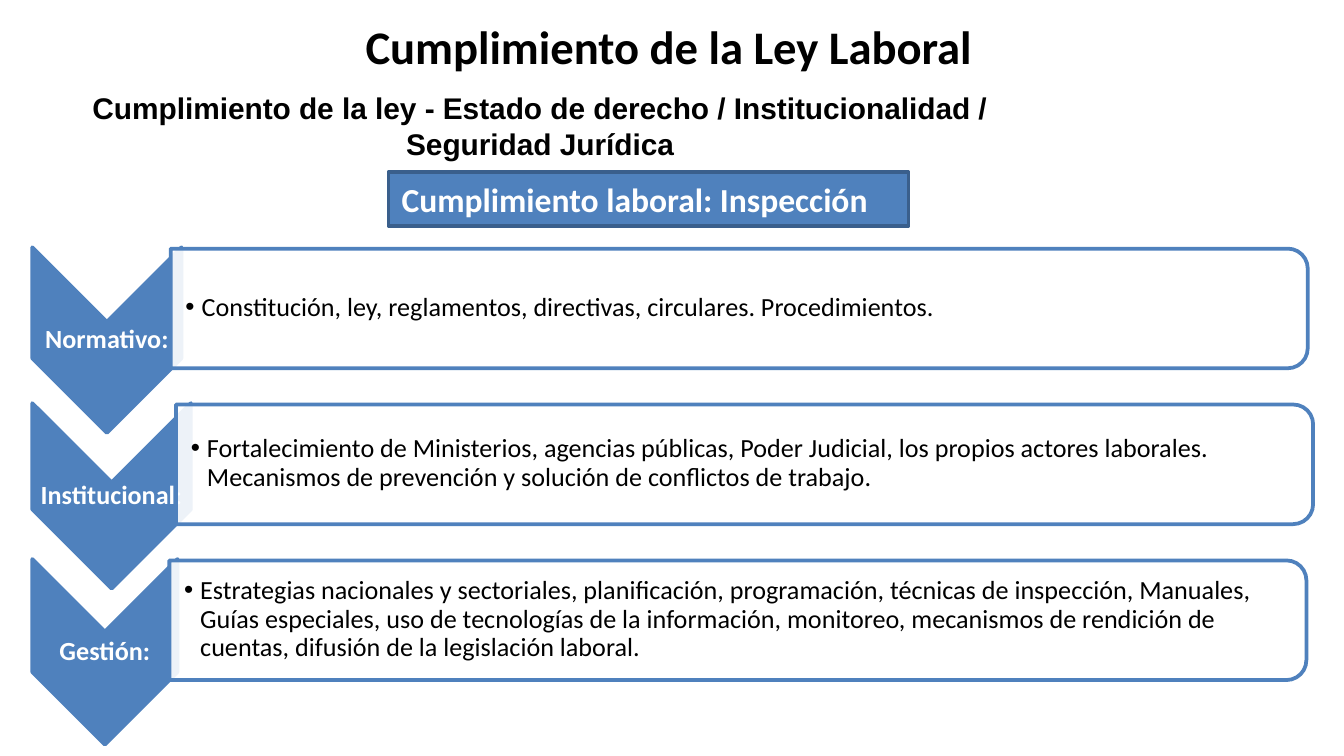
"""Build the slide on labour-law compliance with its three chevron rows."""
from lxml.etree import SubElement
from pptx import Presentation
from pptx.dml.color import RGBColor
from pptx.enum.shapes import MSO_SHAPE
from pptx.enum.text import MSO_ANCHOR, MSO_AUTO_SIZE, PP_ALIGN
from pptx.oxml.ns import qn
from pptx.util import Inches, Pt

COLOURS = {"blue": "4F81BD", "edge": "3A5F8C", "white": "FFFFFF", "black": "000000"}
ROW_TOP, ROW_PITCH = 1.84, 1.16
CHEVRON_LEFT, CHEVRON_LENGTH = 0.24, 1.38
PANEL_WIDTH, PANEL_HEIGHT = 8.46, 0.89
ROWS = [
    (1.11, 1.27, [("Normativo:", True)],
     "Constitución, ley, reglamentos, directivas, circulares. Procedimientos."),
    (1.18, 1.31, [("Institucional", True), (":", False)],
     "Fortalecimiento de Ministerios, agencias públicas, Poder Judicial, los propios "
     "actores laborales. Mecanismos de prevención y solución de conflictos de trabajo."),
    (1.08, 1.26, [("Gestión:", True)],
     "Estrategias nacionales y sectoriales, planificación, programación, técnicas de "
     "inspección, Manuales, Guías especiales, uso de tecnologías de la información, "
     "monitoreo, mecanismos de rendición de cuentas, difusión de la legislación laboral."),
]


def add_block(preset, centre_x, centre_y, width, height, fill, line, rotation=0):
    block = page.shapes.add_shape(preset, Inches(centre_x - width / 2),
                                  Inches(centre_y - height / 2), Inches(width), Inches(height))
    block.rotation = rotation
    block.shadow.inherit = False
    block.fill.solid()
    block.fill.fore_color.rgb = RGBColor.from_string(COLOURS[fill])
    block.line.color.rgb = RGBColor.from_string(COLOURS[line])
    block.line.width = Pt(2)
    return block


def write(box, place, runs, size, colour, align, font="Calibri", inset=None,
          anchor=MSO_ANCHOR.MIDDLE, spacing=1.0, bullet=False):
    box.left, box.top, box.width, box.height = [Inches(length) for length in place]
    page.shapes._spTree.append(box._element)
    frame = box.text_frame
    frame.word_wrap = True
    frame.auto_size = MSO_AUTO_SIZE.NONE
    frame.vertical_anchor = anchor
    if inset is not None:
        frame.margin_left = Inches(inset)
        frame.margin_top = frame.margin_right = frame.margin_bottom = Inches(0.01)
    para = frame.paragraphs[0]
    properties = para._p.get_or_add_pPr()
    properties.set("marL", str(Inches(0.12) if bullet else 0))
    properties.set("indent", str(Inches(-0.12) if bullet else 0))
    if bullet:
        SubElement(properties, qn("a:buFont")).set("typeface", "Arial")
        SubElement(properties, qn("a:buChar")).set("char", "•")
    else:
        SubElement(properties, qn("a:buNone"))
    para.alignment = align
    para.line_spacing = spacing
    para.space_before = Pt(0)
    for text, bold in runs:
        span = para.add_run()
        span.text = text
        span.font.name = font
        span.font.size = Pt(size)
        span.font.bold = bold
        span.font.color.rgb = RGBColor.from_string(COLOURS[colour])


deck = Presentation()
deck.slide_width = Inches(10)
deck.slide_height = deck.slide_width * 9 // 16
page = deck.slides.add_slide(deck.slide_layouts.get_by_name("Comparison"))
title, subtitle, *lists = page.placeholders

for index, (chevron_width, panel_left, label, detail) in enumerate(ROWS):
    top = ROW_TOP + index * ROW_PITCH
    chevron_x = CHEVRON_LEFT + chevron_width / 2
    chevron_y = top + CHEVRON_LENGTH / 2
    panel_y = top + 0.01 + PANEL_HEIGHT / 2
    add_block(MSO_SHAPE.CHEVRON, chevron_x, chevron_y, CHEVRON_LENGTH, chevron_width,
              "blue", "blue", 90)
    write(page.shapes.add_textbox(0, 0, 0, 0),
          (CHEVRON_LEFT, chevron_y - 0.14, chevron_width, 0.28), label, 14, "white",
          PP_ALIGN.CENTER, inset=0.01, spacing=0.9)
    panel = add_block(MSO_SHAPE.ROUND_2_SAME_RECTANGLE, panel_left + PANEL_WIDTH / 2, panel_y,
                      PANEL_HEIGHT, PANEL_WIDTH, "white", "blue", 90)
    panel_fill = panel._element.spPr.find(qn("a:solidFill"))
    SubElement(panel_fill[0], qn("a:alpha")).set("val", "90000")
    write(lists[index], (panel_left, panel_y - 0.41, 8.41, 0.81), [(detail, False)], 14,
          "black", PP_ALIGN.LEFT, inset=0.11, spacing=0.9, bullet=True)

write(title, (2.62, 0.08, 4.77, 0.52), [("Cumplimiento de la Ley Laboral", True)], 25,
      "black", PP_ALIGN.LEFT, anchor=MSO_ANCHOR.TOP)
title.text_frame.word_wrap = False
write(subtitle, (0.08, 0.62, 7.88, 0.64),
      [("Cumplimiento de la ley - Estado de derecho / Institucionalidad / Seguridad Jurídica",
        True)], 16, "black", PP_ALIGN.CENTER, font="Arial", anchor=MSO_ANCHOR.TOP)
banner = add_block(MSO_SHAPE.RECTANGLE, 4.82, 1.48, 3.87, 0.4, "blue", "edge")
write(banner, (2.89, 1.28, 3.87, 0.4), [("Cumplimiento laboral: Inspección", True)], 18,
      "white", PP_ALIGN.LEFT, anchor=MSO_ANCHOR.TOP)

deck.save("out.pptx")
